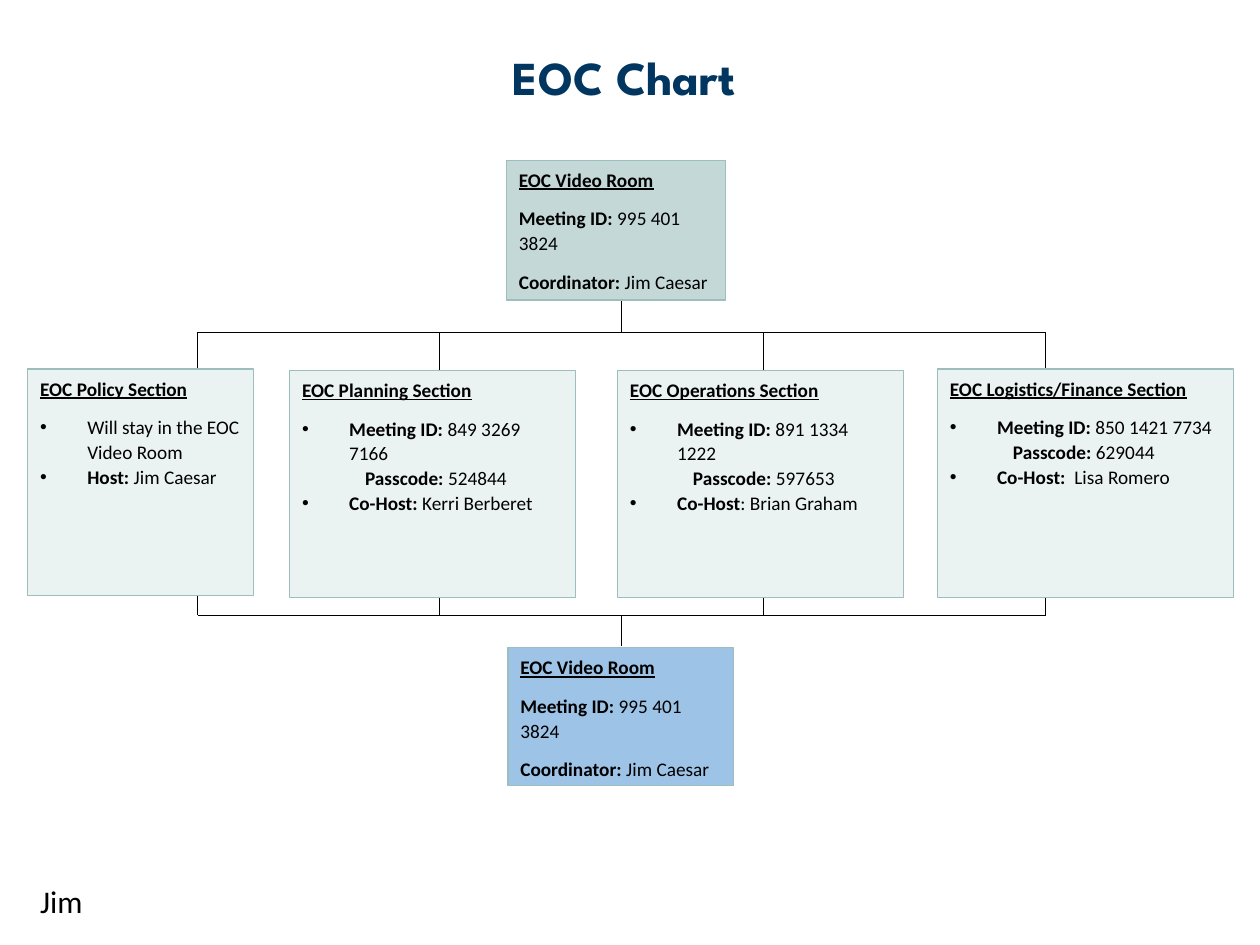
from dataclasses import dataclass

from lxml import etree
from pptx import Presentation
from pptx import util as u
from pptx.dml.color import RGBColor
from pptx.enum import shapes, text
from pptx.oxml import ns

NAVY = RGBColor(0x00, 0x36, 0x60)
BLACK = RGBColor(0x00, 0x00, 0x00)
SAGE = RGBColor(0xC4, 0xD8, 0xD8)
PALE = RGBColor(0xEB, 0xF2, 0xF2)
BLUE = RGBColor(0x9D, 0xC3, 0xE6)
BORDER = RGBColor(0x9C, 0xBE, 0xBE)
BODY_FONT = "Calibri"

TRUNK_X = 12.52
BRANCH_XS = (3.99, 8.86, 15.39, 21.08)
UPPER_RAIL, LOWER_RAIL = 6.7, 12.4


@dataclass(frozen=True)
class Line:
    label: str
    value: str
    bullet: bool = False
    indent: float = 0
    space_after: float = 0


@dataclass(frozen=True)
class Box:
    """One chart box; place is left, top, width, height in centimetres."""
    place: tuple[float, float, float, float]
    fill: RGBColor
    heading: str
    lines: list[Line]


def bullet(label: str, value: str) -> Line:
    return Line(label, value, bullet=True, indent=0.95)


def meeting(number: str, passcode: str, host_label: str, host: str) -> list[Line]:
    return [
        bullet("Meeting ID:", f" {number}"),
        Line("Passcode:", f" {passcode}", indent=1.27),
        bullet(host_label, host),
    ]


ROOM = [
    Line("Meeting ID:", " 995 401 3824", space_after=8),
    Line("Coordinator:", " Jim Caesar", space_after=8),
]
POLICY = [
    bullet("", "Will stay in the EOC Video Room"),
    bullet("Host:", " Jim Caesar"),
]
BOXES = [
    Box((10.21, 3.23, 4.42, 2.82), SAGE, "EOC Video Room", ROOM),
    Box((0.56, 7.44, 4.55, 4.57), PALE, "EOC Policy Section", POLICY),
    Box((5.84, 7.47, 5.77, 4.57), PALE, "EOC Planning Section",
        meeting("849 3269 7166", "524844", "Co-Host: ", "Kerri Berberet")),
    Box((12.45, 7.47, 5.77, 4.57), PALE, "EOC Operations Section",
        meeting("891 1334 1222", "597653", "Co-Host", ": Brian Graham")),
    Box((18.9, 7.44, 5.97, 4.6), PALE, "EOC Logistics/Finance Section",
        meeting("850 1421 7734", "629044", "Co-Host: ", " Lisa Romero")),
    Box((10.24, 13.06, 4.55, 2.77), BLUE, "EOC Video Room", ROOM),
]
CONNECTIONS = [
    *((x, UPPER_RAIL, x, LOWER_RAIL) for x in BRANCH_XS),
    *((BRANCH_XS[0], y, BRANCH_XS[-1], y) for y in (UPPER_RAIL, LOWER_RAIL)),
    (TRUNK_X, 6.07, TRUNK_X, UPPER_RAIL),
    (TRUNK_X, LOWER_RAIL, TRUNK_X, 13.03),
]


def add_run(paragraph, content: str, size: float, bold: bool = False,
            underline: bool = False, font: str = BODY_FONT,
            color: RGBColor = BLACK) -> None:
    run = paragraph.add_run()
    run.text = content
    run.font.name = font
    run.font.size = u.Pt(size)
    run.font.bold = bold
    run.font.underline = underline
    run.font.color.rgb = color


def set_indent(paragraph, line: Line) -> None:
    properties = paragraph._p.get_or_add_pPr()
    properties.set("marL", str(u.Cm(line.indent)))
    properties.set("indent", str(-u.Cm(line.indent) if line.bullet else 0))
    if line.bullet:
        etree.SubElement(properties, ns.qn("a:buFont"), typeface="Arial")
        etree.SubElement(properties, ns.qn("a:buChar"), char="•")


def format_paragraph(paragraph, space_after: float) -> None:
    paragraph.alignment = text.PP_ALIGN.LEFT
    paragraph.line_spacing = 1.07
    paragraph.space_after = u.Pt(space_after)


def add_box(slide, box: Box) -> None:
    shape = slide.shapes.add_shape(
        shapes.MSO_SHAPE.RECTANGLE, *(u.Cm(length) for length in box.place))
    shape.shadow.inherit = False
    shape.fill.solid()
    shape.fill.fore_color.rgb = box.fill
    shape.line.color.rgb = BORDER
    shape.line.width = u.Pt(0.75)
    frame = shape.text_frame
    frame.word_wrap = True
    frame.vertical_anchor = text.MSO_ANCHOR.TOP
    heading = frame.paragraphs[0]
    format_paragraph(heading, 8)
    add_run(heading, box.heading, 11, bold=True, underline=True)
    for line in box.lines:
        paragraph = frame.add_paragraph()
        set_indent(paragraph, line)
        format_paragraph(paragraph, line.space_after)
        if line.label:
            add_run(paragraph, line.label, 11, bold=True)
        add_run(paragraph, line.value, 11)


def add_connection(slide, ends: tuple[float, float, float, float]) -> None:
    connector = slide.shapes.add_connector(
        shapes.MSO_CONNECTOR.STRAIGHT, *(u.Cm(length) for length in ends))
    connector.line.color.rgb = BLACK
    connector.line.width = u.Pt(0.5)
    etree.SubElement(connector._element.spPr, ns.qn("a:effectLst"))


def add_title(slide) -> None:
    title = slide.shapes.title
    title.left, title.top = u.Cm(1.14), u.Cm(0.97)
    title.width, title.height = u.Cm(23.14), u.Cm(1.3)
    frame = title.text_frame
    frame.auto_size = text.MSO_AUTO_SIZE.SHAPE_TO_FIT_TEXT
    frame.vertical_anchor = text.MSO_ANCHOR.MIDDLE
    paragraph = frame.paragraphs[0]
    paragraph.alignment = text.PP_ALIGN.CENTER
    paragraph.line_spacing = 0.9
    add_run(paragraph, "EOC Chart ", 27, bold=True, font="League Spartan", color=NAVY)


def add_presenter(slide) -> None:
    label = slide.shapes.add_textbox(u.Cm(0.56), u.Cm(17.65), u.Cm(1.37), u.Cm(1.02))
    label.text_frame.word_wrap = False
    label.text_frame.auto_size = text.MSO_AUTO_SIZE.SHAPE_TO_FIT_TEXT
    add_run(label.text_frame.paragraphs[0], "Jim", 18)


def main() -> None:
    presentation = Presentation()
    presentation.slide_width, presentation.slide_height = u.Cm(25.4), u.Cm(19.05)
    slide = presentation.slides.add_slide(presentation.slide_layouts[5])
    add_title(slide)
    for ends in CONNECTIONS:
        add_connection(slide, ends)
    for box in BOXES:
        add_box(slide, box)
    add_presenter(slide)
    presentation.save("out.pptx")


if __name__ == "__main__":
    main()
